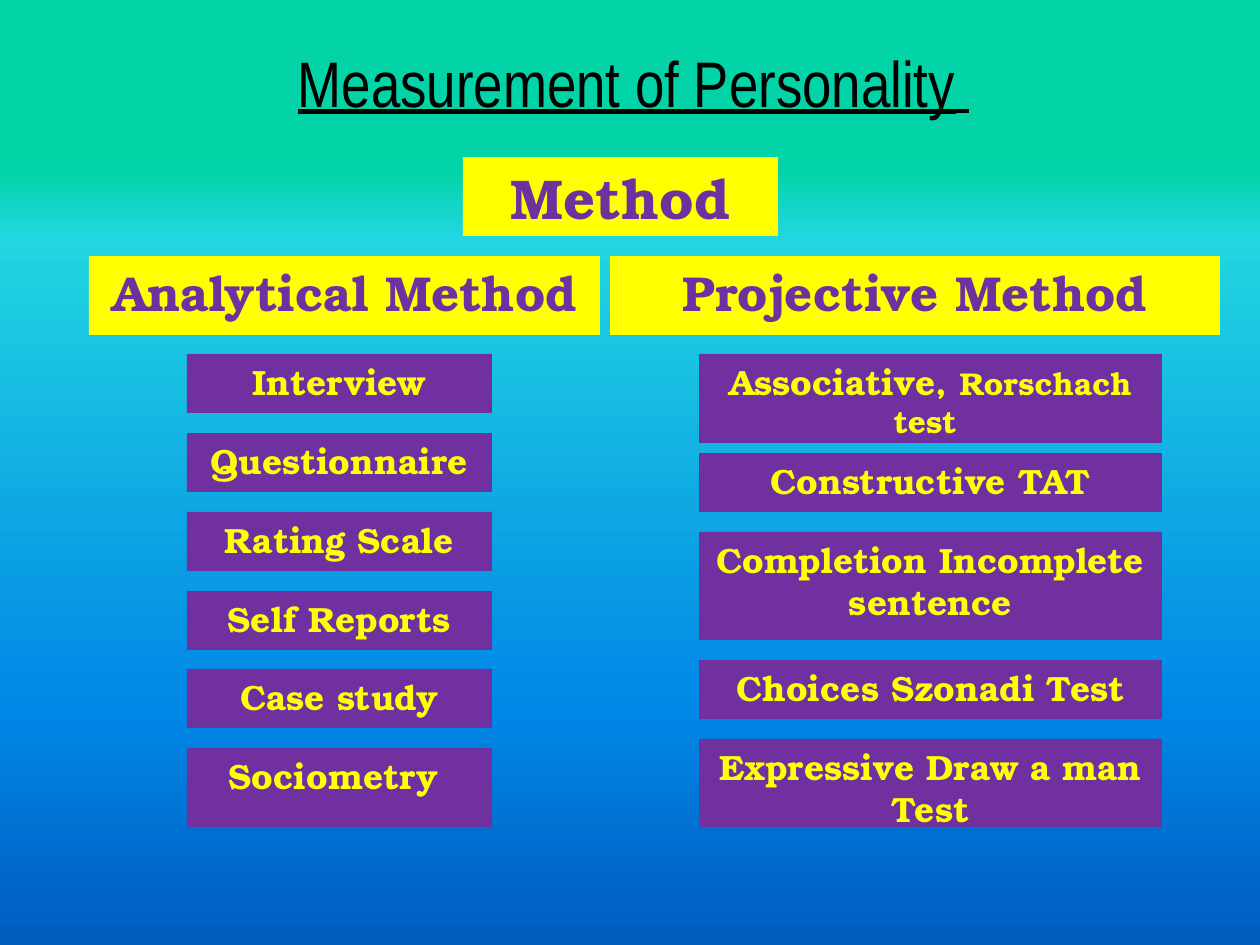
from pptx import Presentation
from pptx.dml.color import RGBColor
from pptx.enum.shapes import MSO_SHAPE
from pptx.enum.text import MSO_ANCHOR, PP_ALIGN
from pptx.oxml import parse_xml
from pptx.oxml.ns import nsdecls
from pptx.util import Pt

SCALE = 914400 / 126  # EMU per px
YELLOW, PURPLE = "FFFF00", "7030A0"
SERIF = "TeX Gyre Bonum"

# Content: text runs are (text, size)
STOPS = [(18, "03D4A8"), (25, "21D6E0"), (75, "0087E6"), (100, "005CBF")]
TITLE = [("Measurement of Personality", 36.8), (" ", 33)]
HEADS = [  # text, size, left, top, width
    ("Method", 32, 463, 157, 315),
    ("Analytical Method", 28, 89, 256, 511),
    ("Projective Method", 28, 610, 256, 610),
]
HEAD_H = 79
LISTS = [  # left, width, rows of (runs, height, gap below)
    (699, 463, [
        ([("Associative, ", 20), ("Rorschach test ", 18)], 89, 10),
        ([("Constructive TAT", 20)], 59, 20),
        ([("Completion Incomplete sentence", 20)], 108, 20),
        ([("Choices Szonadi Test", 20)], 59, 20),
        ([("Expressive Draw a man Test", 20)], 88, 0),
    ]),
    (187, 305, [
        ([("Interview", 20)], 59, 20),
        ([("Questionnaire", 20)], 59, 20),
        ([("Rating Scale", 20)], 59, 20),
        ([("Self Reports", 20)], 59, 19),
        ([("Case study", 20)], 59, 20),
        ([("Sociometry ", 20)], 79, 0),
    ]),
]
LIST_TOP = 354


def px(*vals):
    return [round(v * SCALE) for v in vals]


def color(code):
    return RGBColor.from_string(code)


def write(shape, runs, ink, anchor=MSO_ANCHOR.TOP, **style):
    frame = shape.text_frame
    frame.word_wrap = True
    frame.vertical_anchor = anchor
    para = frame.paragraphs[0]
    para.alignment = PP_ALIGN.CENTER
    for text, size in runs:
        run = para.add_run()
        run.text = text
        run.font.size = Pt(size)
        run.font.color.rgb = color(ink)
        for key, val in style.items():
            setattr(run.font, key, val)
    return para


def box(slide, place, fill, ink, runs):
    shape = slide.shapes.add_shape(MSO_SHAPE.RECTANGLE, *px(*place))
    shape.shadow.inherit = False
    shape.fill.solid()
    shape.fill.fore_color.rgb = color(fill)
    shape.line.fill.background()
    write(shape, runs, ink, name=SERIF, bold=True)


def paint(slide):
    stops = "".join(
        f'<a:gs pos="{pos * 1000}"><a:srgbClr val="{code}"/></a:gs>'
        for pos, code in STOPS)
    fill = slide.background.fill
    fill.gradient()
    fill.gradient_angle = 270  # counter-clockwise: top to bottom
    grad = slide.background._cSld.bg.bgPr.find(
        "{http://schemas.openxmlformats.org/drawingml/2006/main}gradFill")
    grad.replace(grad[0], parse_xml(
        f'<a:gsLst {nsdecls("a")}>{stops}</a:gsLst>'))


def main():
    deck = Presentation()
    deck.slide_width, deck.slide_height = px(1260, 945)
    slide = deck.slides.add_slide(deck.slide_layouts[6])
    paint(slide)

    # Title
    title = slide.shapes.add_textbox(*px(98, 49, 1071, 79))
    para = write(title, TITLE, "000000", MSO_ANCHOR.MIDDLE,
                 name="Arial Narrow", underline=True)
    para.line_spacing = 0.8

    # Headings
    for text, size, left, top, width in HEADS:
        box(slide, (left, top, width, HEAD_H), YELLOW, PURPLE, [(text, size)])

    # Method lists, stacked downwards
    for left, width, rows in LISTS:
        top = LIST_TOP
        for runs, height, gap in rows:
            box(slide, (left, top, width, height), PURPLE, YELLOW, runs)
            top += height + gap

    deck.save("out.pptx")


if __name__ == "__main__":
    main()
